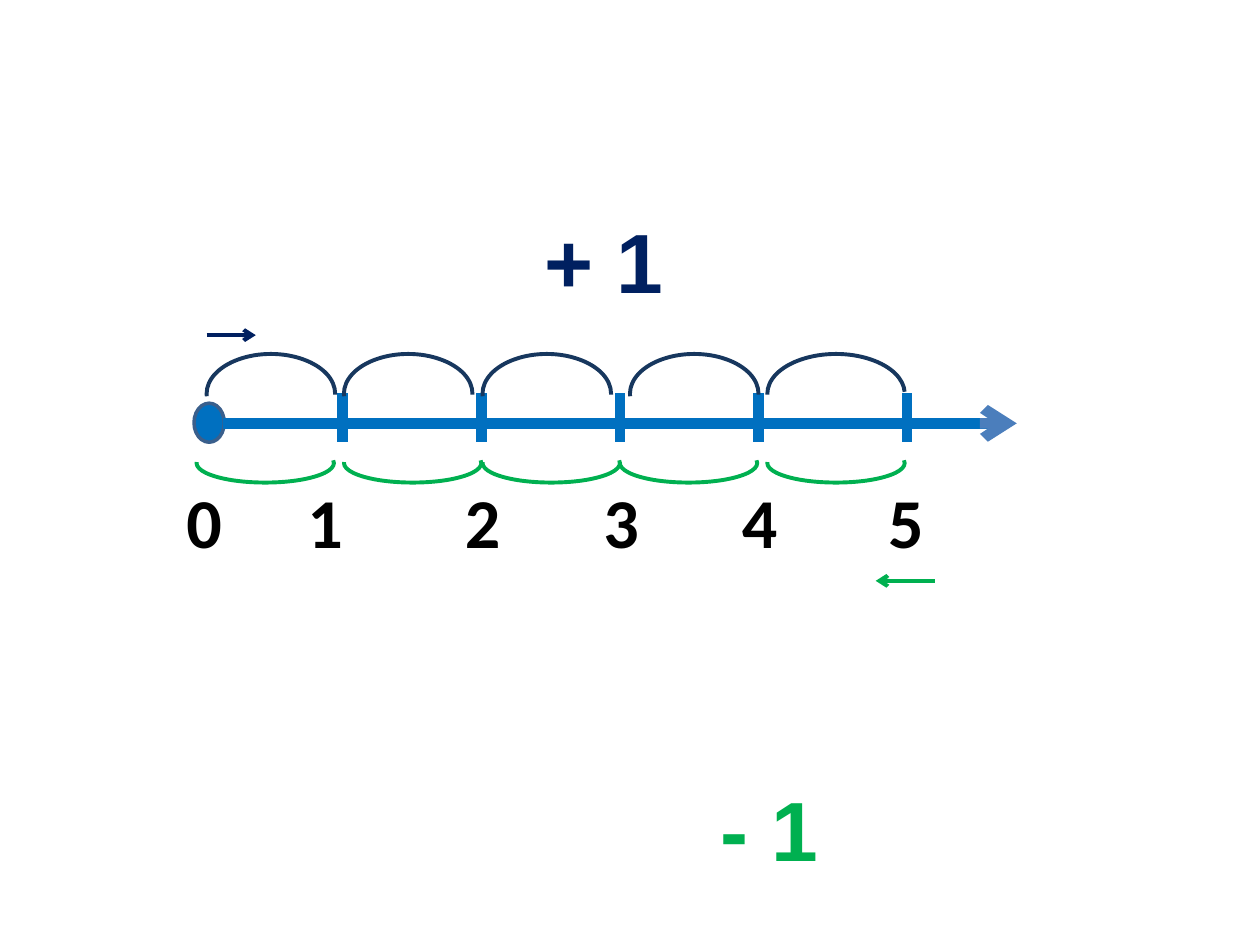
from dataclasses import dataclass

from lxml import etree
from pptx import Presentation
from pptx import util as u
from pptx.dml.color import RGBColor
from pptx.enum import shapes, text
from pptx.oxml.ns import qn


@dataclass(frozen=True)
class Theme:
    axis: str = "0070C0"
    origin_edge: str = "3A5F8C"
    axis_head: str = "4B7EBC"
    hop_up: str = "17375E"
    plus: str = "002060"
    minus: str = "00B050"
    number: str = "000000"
    number_font: str = "Calibri"
    step_font: str = "Arial"
    number_size: float = 40
    step_size: float = 48
    axis_width: float = 6
    hop_width: float = 2.25


@dataclass(frozen=True)
class Box:
    """Place and size in grid columns and rows."""
    left: float
    top: float
    width: float
    height: float


@dataclass(frozen=True)
class Label:
    words: str
    box: Box
    font: str
    size: float
    color: str


THEME = Theme()
COLUMNS, ROWS = 100, 75
STEP = 11  # columns between neighbouring numbers
AXIS_ROW = 33.6

prs = Presentation()
prs.slide_width, prs.slide_height = u.Inches(10), u.Inches(7.5)
s = prs.slides.add_slide(prs.slide_layouts[6])


def col(n: float) -> int:
    return round(prs.slide_width * n / COLUMNS)


def row(n: float) -> int:
    return round(prs.slide_height * n / ROWS)


def place(box: Box) -> tuple[int, int, int, int]:
    return col(box.left), row(box.top), col(box.width), row(box.height)


def draw_line(start: tuple[float, float], end: tuple[float, float],
              color: str, width: float, arrow: bool = False) -> None:
    c = s.shapes.add_connector(shapes.MSO_CONNECTOR.STRAIGHT, col(start[0]),
                               row(start[1]), col(end[0]), row(end[1]))
    c.line.color.rgb = RGBColor.from_string(color)
    c.line.width = u.Pt(width)
    if arrow:
        etree.SubElement(c.line._get_or_add_ln(), qn("a:tailEnd"), type="arrow")
    etree.SubElement(c._element.spPr, qn("a:effectLst"))


def draw_hop(box: Box, color: str, below: bool = False,
             angles: tuple[float, float] = (106.6, 0.53)) -> None:
    sp = s.shapes.add_shape(shapes.MSO_SHAPE.ARC, *place(box))
    sp.adjustments[0], sp.adjustments[1] = angles
    sp.rotation = 180 if below else 0
    sp.shadow.inherit = False
    sp.fill.background()
    sp.line.color.rgb = RGBColor.from_string(color)
    sp.line.width = u.Pt(THEME.hop_width)


def draw_label(label: Label) -> None:
    tf = s.shapes.add_textbox(*place(label.box)).text_frame
    tf.word_wrap = True
    tf.auto_size = text.MSO_AUTO_SIZE.SHAPE_TO_FIT_TEXT
    tf.text = label.words
    r = tf.paragraphs[0].runs[0]
    r.font.name, r.font.size, r.font.bold = label.font, u.Pt(label.size), True
    r.font.color.rgb = RGBColor.from_string(label.color)


# Axis with its origin and arrowhead
origin = s.shapes.add_shape(shapes.MSO_SHAPE.OVAL, *place(Box(15.4, 32, 2.4, 3.1)))
origin.shadow.inherit = False
origin.fill.solid()
origin.fill.fore_color.rgb = RGBColor.from_string(THEME.axis)
origin.line.color.rgb = RGBColor.from_string(THEME.origin_edge)
origin.line.width = u.Pt(2)
draw_line((17.7, AXIS_ROW), (79.9, AXIS_ROW), THEME.axis, THEME.axis_width)
draw_line((79.9, AXIS_ROW), (80.7, AXIS_ROW), THEME.axis_head,
          THEME.axis_width, arrow=True)

# Ticks: even steps, with the last one set a little wider
for x in [27.2 + STEP * i for i in range(4)] + [72]:
    draw_line((x, 31.2), (x, 35.1), THEME.axis, THEME.axis_width)

# Numbers under the axis
for n, x in enumerate((13.8, 23.4, 35.9, 46.9, 57.9, 69.5)):
    draw_label(Label(str(n), Box(x, 37.5, 4.9, 7.7), THEME.number_font,
                     THEME.number_size, THEME.number))

# Hops up (adding one); the last is wider and reaches the last tick
for x in (16.4, 27.3, 38.3, 50):
    draw_hop(Box(x, 28.1, 10.2, 6.3), THEME.hop_up)
draw_hop(Box(60.9, 28.1, 10.9, 6.3), THEME.hop_up, angles=(107.49, 215.04))

# Hops down (taking one away)
for x in (15.6, 27.3, 38.3, 49.2, 60.9):
    draw_hop(Box(x, 35.2, 10.9, 3.1), THEME.minus, below=True)

# Step names and directions
draw_label(Label("+ 1", Box(42.2, 16.1, 18.8, 9.1), THEME.step_font,
                 THEME.step_size, THEME.plus))
draw_label(Label("- 1", Box(56.2, 61.2, 12.5, 9.1), THEME.step_font,
                 THEME.step_size, THEME.minus))
draw_line((16.4, 26.6), (20.3, 26.6), THEME.plus, THEME.hop_width, arrow=True)
draw_line((74.2, 46.1), (69.5, 46.1), THEME.minus, THEME.hop_width, arrow=True)

prs.save("out.pptx")
